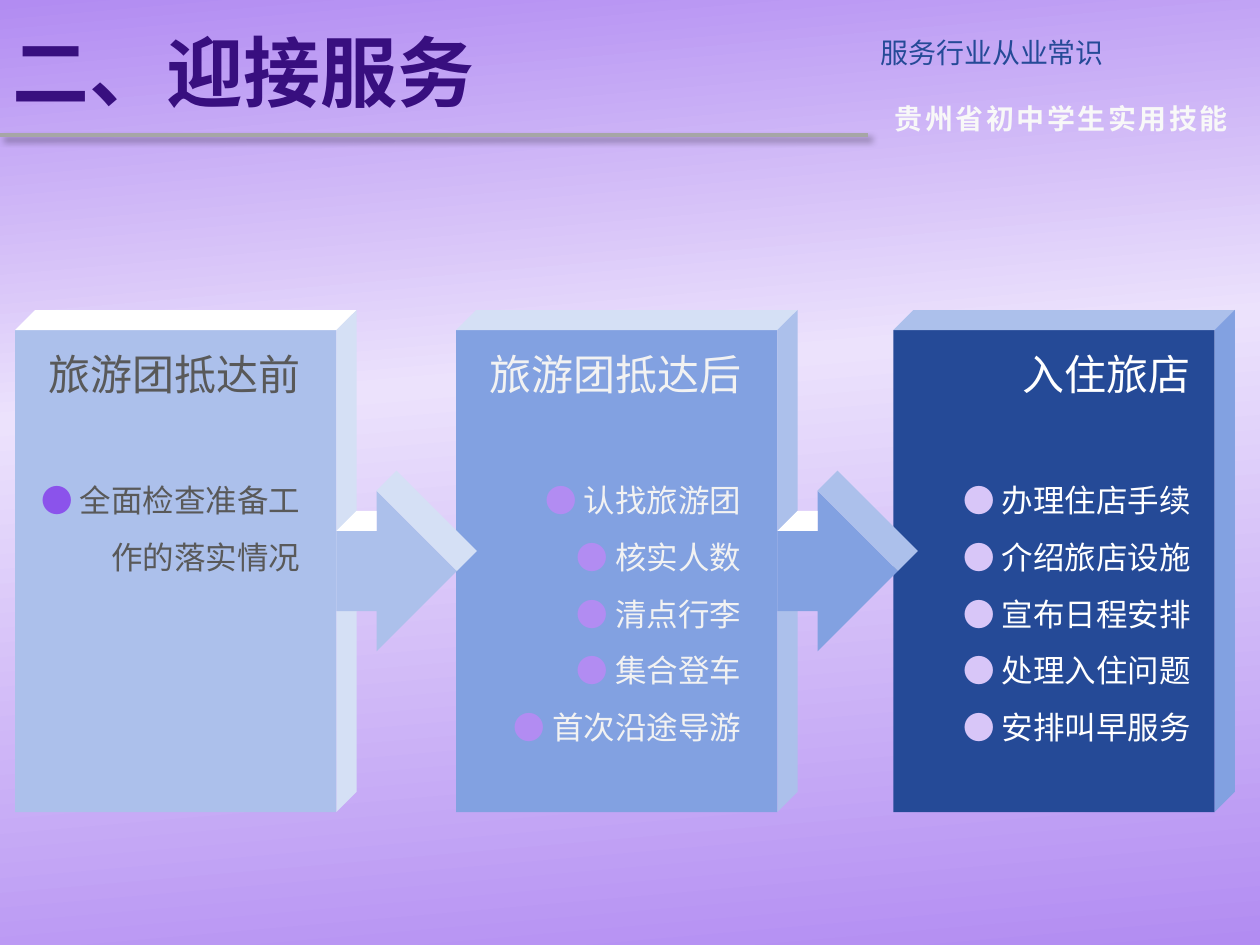
"""Build the reception-service slide: three raised panels joined by arrows."""
from lxml import etree
from pptx import Presentation, util as u
from pptx.dml.color import RGBColor
from pptx.enum import shapes, text
from pptx.oxml import parse_xml
from pptx.oxml.ns import nsdecls, qn

THEME = {
    "font": "Noto Sans CJK SC", "dot": "Calibri",
    "edge": "B28CF2", "glow": "ECE2FC", "rule": "A6A6A6",
    "title": "380F7F", "course": "254A97", "skill": "F8F8F8",
    "big": 44, "head": 24, "item": 18, "small": 16, "gap": 36,
}
TITLE, COURSE, SKILL = "二、迎接服务", "服务行业从业常识", "贵州省初中学生实用技能"
STAGES = [
    {"x": 0.12, "pad": 0, "head": "旅游团抵达前", "items": ["全面检查准备工作的落实情况"],
     "front": "ACC0EB", "top": "FFFFFF", "side": "D5E0F5", "ink": "595959", "dot": "8B53EB"},
    {"x": 3.62, "pad": 0, "head": "旅游团抵达后",
     "items": ["认找旅游团", "核实人数", "清点行李", "集合登车", "首次沿途导游"],
     "front": "82A1E1", "top": "D5E0F5", "side": "ACC0EB", "ink": "F2F2F2", "dot": "B28CF2"},
    {"x": 7.09, "pad": 0.1, "head": "入住旅店",
     "items": ["办理住店手续", "介绍旅店设施", "宣布日程安排", "处理入住问题", "安排叫早服务"],
     "front": "254A97", "top": "ACC0EB", "side": "82A1E1", "ink": "FFFFFF", "dot": "D8C6F8"},
]
WIDE, HIGH = 10, 7.5
COLS, ROWS = 16, 24
UNIT = 2.55 / COLS
TOP = 2.62
ROOF = [(0, 0), (1, -1), (COLS + 1, -1), (COLS, 0)]
WALL = [(COLS + 1, -1), (COLS + 1, ROWS - 1), (COLS, ROWS), (COLS, 0)]
ARROW = [(0, 6), (2, 6), (2, 8), (6, 4), (2, 0), (2, 2), (0, 2)]
SLOPE = [(2, 0), (3, -1), (7, 3), (6, 4)]
LEDGE = [(2, 1), (1, 1), (0, 2), (2, 2)]
SHIFT = (COLS, 8)


def paint(shape, tint):
    shape.fill.solid()
    shape.fill.fore_color.rgb = RGBColor.from_string(tint)
    shape.line.fill.background()
    shape.shadow.inherit = False


def facet(group, left, spots, tint, shift=(0, 0)):
    pts = [(u.Inches(left + (x + shift[0]) * UNIT), u.Inches(TOP + (y + shift[1]) * UNIT))
           for x, y in spots]
    pen = group.shapes.build_freeform(*pts[0])
    pen.add_line_segments(pts[1:], close=True)
    paint(pen.convert_to_shape(), tint)


def style(font, size, tint, name=THEME["font"], bold=False):
    font.size, font.bold, font.name = u.Pt(size), bold, name
    font.color.rgb = RGBColor.from_string(tint)


def frame(slide, box, anchor=text.MSO_ANCHOR.TOP):
    body = slide.shapes.add_textbox(*map(u.Inches, box)).text_frame
    body.word_wrap, body.vertical_anchor = True, anchor
    return body


def label(slide, box, words, size, tint, align, bold=False, anchor=text.MSO_ANCHOR.TOP):
    para = frame(slide, box, anchor).paragraphs[0]
    run = para.add_run()
    run.text, para.alignment = words, align
    style(run.font, size, tint, bold=bold)
    return run


def panel(slide, stage):
    left, group = stage["x"], slide.shapes.add_group_shape()
    front = group.shapes.add_shape(
        shapes.MSO_SHAPE.RECTANGLE,
        *map(u.Inches, (left, TOP, COLS * UNIT, ROWS * UNIT)))
    paint(front, stage["front"])
    facet(group, left, ROOF, stage["top"])
    facet(group, left, WALL, stage["side"])


def arrow(slide, stage):
    group = slide.shapes.add_group_shape()
    for spots, tint in ((ARROW, stage["front"]), (SLOPE, stage["side"]), (LEDGE, "FFFFFF")):
        facet(group, stage["x"], spots, tint, SHIFT)


def notes(slide, stage):
    high = 3.59 if len(stage["items"]) > 1 else 1.92
    box = (stage["x"] + stage["pad"], TOP + 0.1, 2.36, high)
    body = frame(slide, box)
    head = body.paragraphs[0]
    head.add_run().text = stage["head"]
    head.alignment = text.PP_ALIGN.RIGHT
    style(head.runs[0].font, THEME["head"], stage["ink"])
    for rank, item in enumerate(stage["items"]):
        para = body.add_paragraph()
        para.alignment, para.line_spacing = text.PP_ALIGN.RIGHT, 1.5
        para.space_before = u.Pt(0 if rank else THEME["gap"])
        for words, tint, name in (("● ", stage["dot"], THEME["dot"]),
                                  (item, stage["ink"], THEME["font"])):
            run = para.add_run()
            run.text = words
            style(run.font, THEME["item"], tint, name)


def backdrop(slide):
    stops = "".join(
        f'<a:gs pos="{spot * 1000}"><a:srgbClr val="{THEME[tint]}"/></a:gs>'
        for spot, tint in ((0, "edge"), (40, "glow"), (100, "edge")))
    slide.background.fill.solid()
    props = slide.background._cSld.bg.bgPr
    props.replace(props[0], parse_xml(
        f'<a:gradFill {nsdecls("a")} rotWithShape="1"><a:gsLst>{stops}</a:gsLst>'
        '<a:lin ang="5100000" scaled="0"/></a:gradFill>'))


def rule(slide):
    line = slide.shapes.add_connector(
        shapes.MSO_CONNECTOR.STRAIGHT, *map(u.Inches, (0, 1.07, 6.89, 1.07)))
    line.line.width = u.Pt(2.25)
    line.line.color.rgb = RGBColor.from_string(THEME["rule"])
    glow = etree.SubElement(line._element.spPr, qn("a:effectLst"))
    glow.append(parse_xml(
        f'<a:outerShdw {nsdecls("a")} blurRad="{u.Pt(4)}" dist="{u.Pt(3)}" dir="2700000" '
        'algn="tl" rotWithShape="0"><a:srgbClr val="000000"><a:alpha val="40000"/>'
        '</a:srgbClr></a:outerShdw>'))


def main():
    deck = Presentation()
    deck.slide_width, deck.slide_height = u.Inches(WIDE), u.Inches(HIGH)
    slide = deck.slides.add_slide(deck.slide_layouts[6])
    backdrop(slide)
    rule(slide)
    skill = label(slide, (6.97, 0.76, 2.91, 0.37), SKILL, THEME["small"], THEME["skill"],
                  text.PP_ALIGN.CENTER, bold=True)
    skill.font._element.set("spc", "150")
    label(slide, (6.89, 0.23, 3.11, 0.37), COURSE, THEME["small"], THEME["course"],
          text.PP_ALIGN.JUSTIFY)
    label(slide, (0, 0.05, 6.89, 1.02), TITLE, THEME["big"], THEME["title"],
          text.PP_ALIGN.LEFT, bold=True, anchor=text.MSO_ANCHOR.MIDDLE)
    for stage in reversed(STAGES):
        panel(slide, stage)
        if stage is not STAGES[-1]:
            arrow(slide, stage)
        notes(slide, stage)
    deck.save("out.pptx")


if __name__ == "__main__":
    main()
